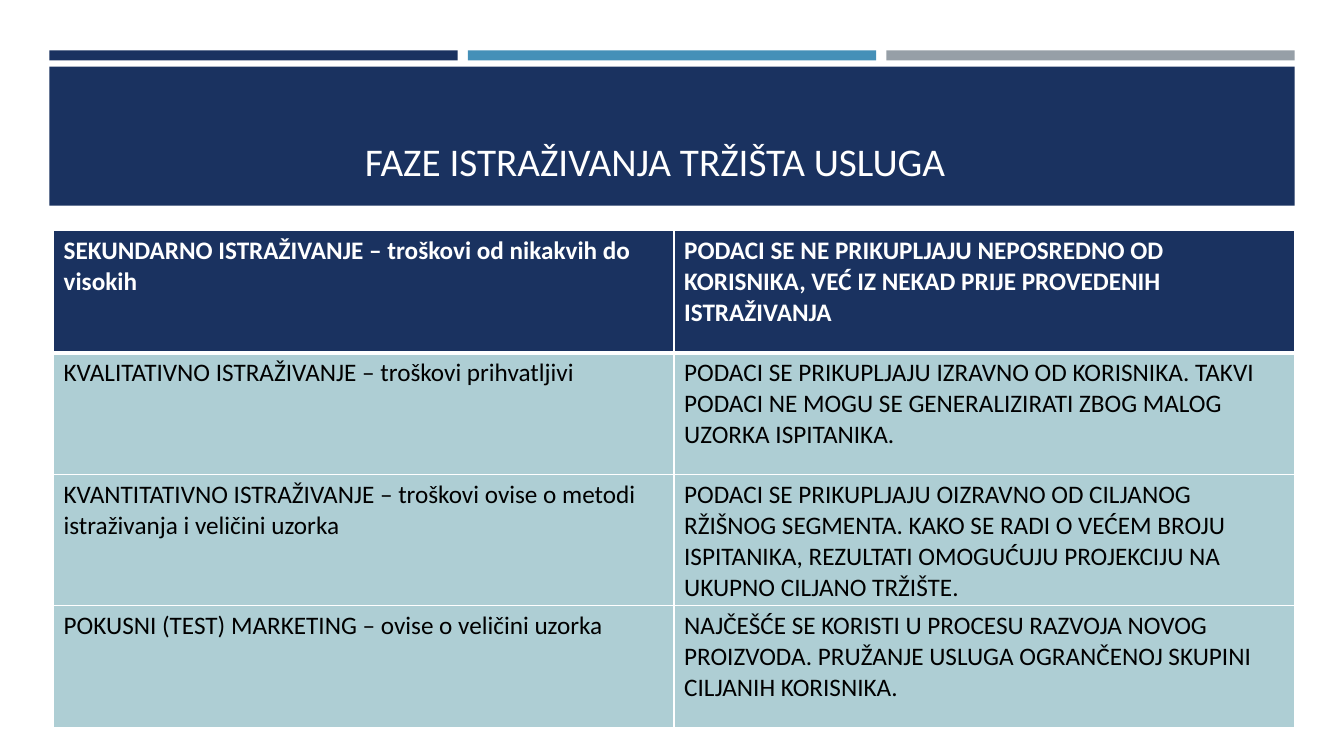
from lxml.etree import SubElement
from pptx import Presentation
from pptx.dml.color import RGBColor
from pptx.enum.shapes import MSO_SHAPE as Shape
from pptx.enum.text import MSO_ANCHOR as Anchor
from pptx.oxml.ns import qn
from pptx.util import Inches, Pt

NAVY, BLUE, GRAY, TEAL = "1A3260", "4590B8", "969FA7", "AECED4"
WHITE, BLACK = "FFFFFF", "000000"
PHASES = [
    ("SEKUNDARNO ISTRAŽIVANJE – troškovi od nikakvih do visokih",
     "PODACI SE NE PRIKUPLJAJU NEPOSREDNO OD KORISNIKA, VEĆ IZ NEKAD PRIJE "
     "PROVEDENIH ISTRAŽIVANJA"),
    ("KVALITATIVNO ISTRAŽIVANJE – troškovi prihvatljivi",
     "PODACI SE PRIKUPLJAJU IZRAVNO OD KORISNIKA. TAKVI PODACI NE MOGU SE "
     "GENERALIZIRATI ZBOG MALOG UZORKA ISPITANIKA."),
    ("KVANTITATIVNO ISTRAŽIVANJE – troškovi ovise o metodi istraživanja i veličini uzorka",
     "PODACI SE PRIKUPLJAJU OIZRAVNO OD CILJANOG RŽIŠNOG SEGMENTA. KAKO SE RADI O "
     "VEĆEM BROJU ISPITANIKA, REZULTATI OMOGUĆUJU PROJEKCIJU NA UKUPNO CILJANO TRŽIŠTE."),
    ("POKUSNI (TEST) MARKETING – ovise o veličini uzorka",
     "NAJČEŠĆE SE KORISTI U PROCESU RAZVOJA NOVOG PROIZVODA. PRUŽANJE USLUGA "
     "OGRANČENOJ SKUPINI CILJANIH KORISNIKA."),
]


def color(value):
    """Turn a hex string into a colour."""
    return RGBColor.from_string(value)


class SlideBuilder:
    """Places styled elements on a grid of three columns and 75 rows."""

    MARGIN, COLUMN, GAP, ROW = 0.49, 4.15, 0.1, 0.1
    FONT = "Calibri"

    def __init__(self, slide):
        """Keep the slide being built."""
        self.slide = slide

    def area(self, column, row, columns, rows):
        """Convert grid units to left, top, width and height."""
        return (Inches(self.MARGIN + column * self.COLUMN), Inches(row * self.ROW),
                Inches(columns * self.COLUMN - self.GAP), Inches(rows * self.ROW))

    def set_text(self, frame, text, size, fill, bold=False):
        """Put one styled paragraph into a text frame."""
        paragraph = frame.paragraphs[0]
        paragraph.text = text
        font = paragraph.font
        for name, value in {"name": self.FONT, "size": Pt(size), "bold": bold}.items():
            setattr(font, name, value)
        font.color.rgb = color(fill)

    def bar(self, grid, fill):
        """Add a plain filled rectangle."""
        shape = self.slide.shapes.add_shape(Shape.RECTANGLE, *self.area(*grid))
        shape.shadow.inherit = False
        shape.fill.solid()
        shape.fill.fore_color.rgb = color(fill)
        shape.line.fill.background()

    def title(self, grid, text):
        """Add the bottom-anchored title."""
        frame = self.slide.shapes.add_textbox(*self.area(*grid)).text_frame
        for name, value in {"word_wrap": True, "vertical_anchor": Anchor.BOTTOM}.items():
            setattr(frame, name, value)
        self.set_text(frame, text, 28, WHITE)

    def borders(self, cell, **widths):
        """Draw white cell borders of the given widths in points."""
        properties = cell._tc.get_or_add_tcPr()
        for position, (side, width) in enumerate(widths.items()):
            line = properties.makeelement(qn(f"a:ln{side}"), {"w": str(Pt(width))})
            fill = SubElement(line, qn("a:solidFill"))
            SubElement(fill, qn("a:srgbClr"), val=WHITE)
            properties.insert(position, line)

    def table(self, grid, records):
        """Add a table with a dark header row."""
        table = self.slide.shapes.add_table(
            len(records), len(records[0]), *self.area(*grid)).table
        for index, record in enumerate(records):
            header = index == 0
            for cell, text in zip(table.rows[index].cells, record):
                cell.fill.solid()
                cell.fill.fore_color.rgb = color(NAVY if header else TEAL)
                self.set_text(cell.text_frame, text, 18, WHITE if header else BLACK, header)
                self.borders(cell, L=1, R=1, T=3 if index == 1 else 1, B=3 if header else 1)


def main():
    """Build and save the slide."""
    presentation = Presentation()
    presentation.slide_width, presentation.slide_height = Inches(13.33), Inches(7.5)
    builder = SlideBuilder(presentation.slides.add_slide(presentation.slide_layouts[6]))
    for column, fill in enumerate((NAVY, BLUE, GRAY)):
        builder.bar((column, 5, 1, 1), fill)
    builder.bar((0, 6.6, 3, 13.8), NAVY)
    builder.title((0.73, 8, 2.23, 10.8), "FAZE ISTRAŽIVANJA TRŽIŠTA USLUGA")
    builder.table((0.01, 22.9, 2.99, 48.4), PHASES)
    presentation.save("out.pptx")


if __name__ == "__main__":
    main()
